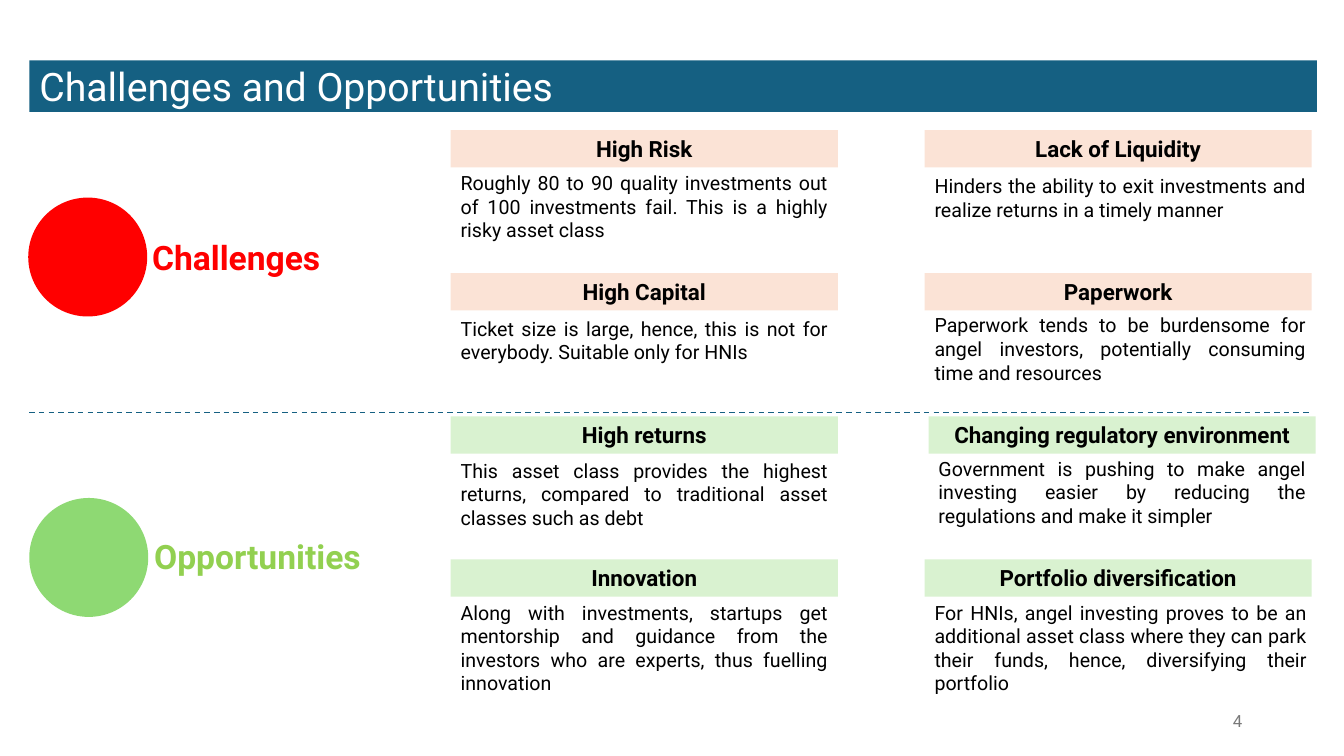
from dataclasses import dataclass

from lxml import etree
from pptx import Presentation
from pptx import util as u
from pptx.dml.color import RGBColor
from pptx.enum import dml, shapes, text
from pptx.oxml import ns

# Content
TITLE = "Challenges and Opportunities"
PAGE_NUMBER = "4"

# Each card: heading, body, left shift, gap from heading top to body top, body width
SECTIONS = [
    {
        "name": "Challenges", "accent": "FF0000", "label_color": "FF0000", "tint": "FBE3D6",
        "circle": (28, 196), "label": (141, 230, 193, 50),
        "cards": [
            ("High Risk", "Roughly 80 to 90 quality investments out of 100 investments fail. "
             "This is a highly risky asset class", 0, 36, 384),
            ("Lack of Liquidity", "Hinders the ability to exit investments and realize returns "
             "in a timely manner", 0, 39, 388),
            ("High Capital", "Ticket size is large, hence, this is not for everybody. "
             "Suitable only for HNIs", 0, 38, 384),
            ("Paperwork", "Paperwork tends to be burdensome for angel investors, potentially "
             "consuming time and resources", 0, 35, 388),
        ],
    },
    {
        "name": "Opportunities", "accent": "8ED973", "label_color": "92D050", "tint": "D9F2D0",
        "circle": (29, 494), "label": (143, 527, 233, 50),
        "cards": [
            ("High returns", "This asset class provides the highest returns, compared to "
             "traditional asset classes such as debt", 0, 37, 384),
            ("Changing regulatory environment", "Government is pushing to make angel investing "
             "easier by reducing the regulations and make it simpler", 4, 35, 384),
            ("Innovation", "Along with investments, startups get mentorship and guidance from "
             "the investors who are experts, thus fuelling innovation", 0, 36, 384),
            ("Portfolio diversification", "For HNIs, angel investing proves to be an additional "
             "asset class where they can park their funds, hence, diversifying their portfolio",
             0, 36, 389),
        ],
    },
]


@dataclass(frozen=True)
class Theme:
    font: str = "Roboto"
    bar: str = "156082"
    light: str = "FFFFFF"
    ink: str = "000000"
    muted: str = "797979"
    title_size: int = 28
    label_size: int = 24
    heading_size: int = 16
    body_size: int = 14
    number_size: int = 12


THEME = Theme()

# Layout, in px at 100 px to the inch
PX = 9144
SLIDE_SIZE = (1333, 750)
TITLE_BOX = (29, 60, 1277, 51)
NUMBER_BOX = (942, 695, 300, 40)
DIVIDER = (29, 409, 1301, 409)
CIRCLE_SIZE = 118
GRID_LEFT, GRID_TOP = 447, 129
COLUMN_STEP, ROW_STEP = 470, 142
COLUMNS, ROWS_PER_SECTION = 2, 2
HEADING_WIDTH, HEADING_HEIGHT = 384, 37
BODY_HEIGHT = 81


def px(*lengths):
    return [u.Emu(length * PX) for length in lengths]


def write(shape, words, size, color, align=text.PP_ALIGN.LEFT, bold=False,
          anchor=text.MSO_ANCHOR.TOP, wrap=True):
    frame = shape.text_frame
    frame.text = words
    frame.word_wrap = wrap
    frame.auto_size = text.MSO_AUTO_SIZE.NONE
    frame.vertical_anchor = anchor
    paragraph = frame.paragraphs[0]
    paragraph.alignment = align
    font = paragraph.runs[0].font
    font.name, font.size, font.bold = THEME.font, u.Pt(size), bold
    font.color.rgb = RGBColor.from_string(color)
    return paragraph


def paint(shape, color):
    shape.fill.solid()
    shape.fill.fore_color.rgb = RGBColor.from_string(color)
    shape.line.fill.background()


def add_filled(slide, kind, box, color):
    shape = slide.shapes.add_shape(kind, *px(*box))
    shape.shadow.inherit = False
    paint(shape, color)
    return shape


def add_title(slide):
    title = slide.shapes.title
    title.left, title.top, title.width, title.height = px(*TITLE_BOX)
    paint(title, THEME.bar)
    paragraph = write(title, TITLE, THEME.title_size, THEME.light,
                      anchor=text.MSO_ANCHOR.MIDDLE)
    paragraph.space_before = paragraph.space_after = u.Pt(6)


def add_divider(slide):
    line = slide.shapes.add_connector(shapes.MSO_CONNECTOR.STRAIGHT, *px(*DIVIDER))
    line.line.color.rgb = RGBColor.from_string(THEME.bar)
    line.line.width = u.Pt(1)
    line.line.dash_style = dml.MSO_LINE.DASH
    etree.SubElement(line._element.spPr, ns.qn("a:effectLst"))


def add_card(slide, card, left, top, tint):
    heading, body, shift, body_gap, body_width = card
    left += shift
    band = add_filled(slide, shapes.MSO_SHAPE.RECTANGLE,
                      (left, top, HEADING_WIDTH, HEADING_HEIGHT), tint)
    write(band, heading, THEME.heading_size, THEME.ink, text.PP_ALIGN.CENTER, bold=True)
    box = slide.shapes.add_textbox(*px(left, top + body_gap, body_width, BODY_HEIGHT))
    write(box, body, THEME.body_size, THEME.ink, text.PP_ALIGN.JUSTIFY)


def add_section(slide, section, first_row):
    # Marker and label
    add_filled(slide, shapes.MSO_SHAPE.OVAL,
               (*section["circle"], CIRCLE_SIZE, CIRCLE_SIZE), section["accent"])
    label = slide.shapes.add_textbox(*px(*section["label"]))
    write(label, section["name"], THEME.label_size, section["label_color"],
          bold=True, wrap=False)

    # Card grid
    for index, card in enumerate(section["cards"]):
        row, column = divmod(index, COLUMNS)
        add_card(slide, card, GRID_LEFT + column * COLUMN_STEP,
                 GRID_TOP + (first_row + row) * ROW_STEP, section["tint"])


def main():
    presentation = Presentation()
    presentation.slide_width, presentation.slide_height = px(*SLIDE_SIZE)
    slide = presentation.slides.add_slide(presentation.slide_layouts[5])

    add_title(slide)
    for number, section in enumerate(SECTIONS):
        add_section(slide, section, number * ROWS_PER_SECTION)
    add_divider(slide)

    # Page number
    page = slide.shapes.add_textbox(*px(*NUMBER_BOX))
    write(page, PAGE_NUMBER, THEME.number_size, THEME.muted,
          text.PP_ALIGN.RIGHT, anchor=text.MSO_ANCHOR.MIDDLE)

    presentation.save("out.pptx")


if __name__ == "__main__":
    main()
